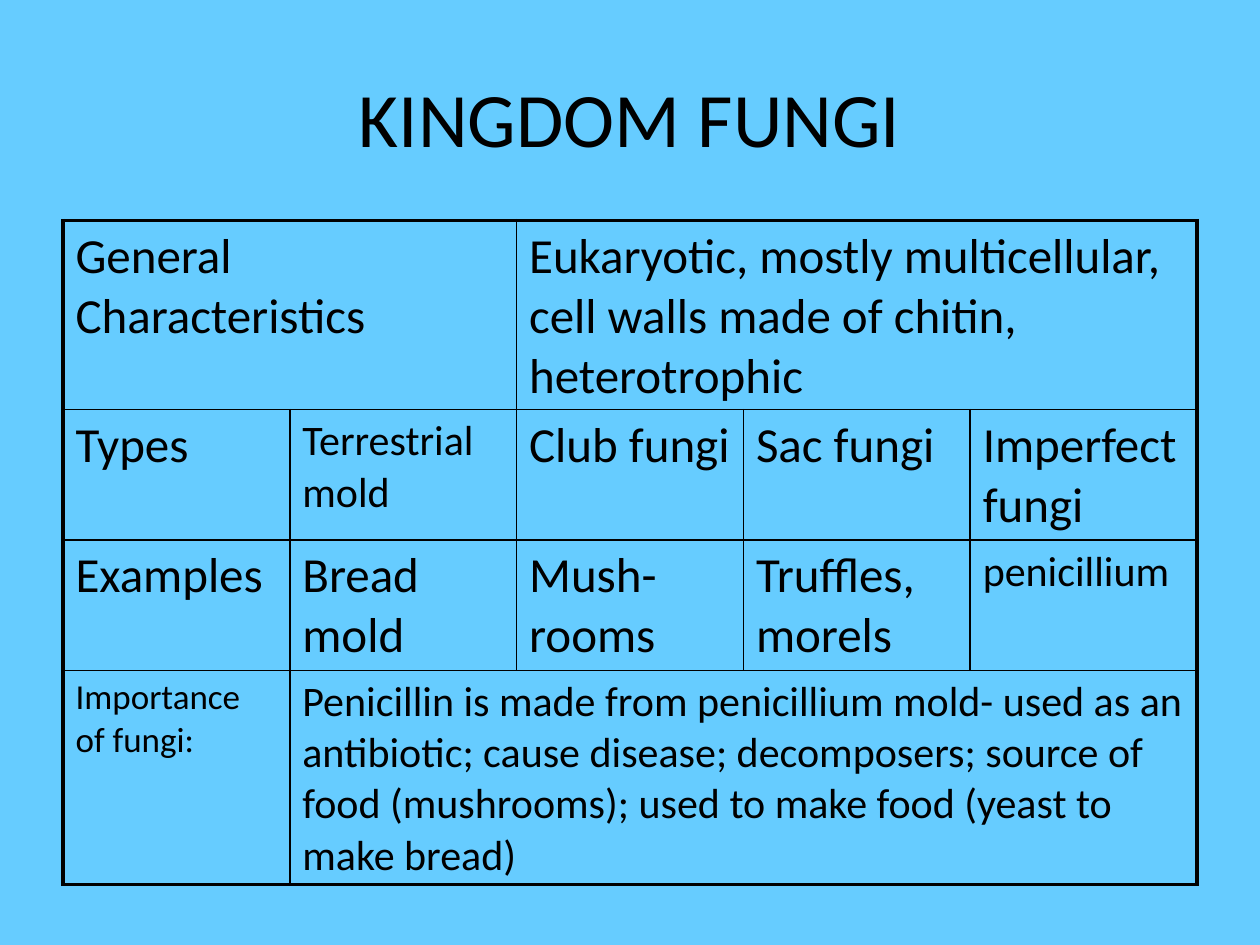
import pptx
import pptx.util
import pptx.dml.color
import pptx.enum.text
import pptx.oxml
import pptx.oxml.ns
from pptx.util import Inches


def color(value):
    return pptx.dml.color.RGBColor.from_string(value)


def write(frame, text, size):
    frame.word_wrap = True
    paragraph = frame.paragraphs[0]
    run = paragraph.add_run()
    run.text = text
    font_format = {"name": "Calibri", "size": pptx.util.Pt(size), "bold": False}
    for name, value in font_format.items():
        setattr(run.font, name, value)
    run.font.color.rgb = color(BLACK)
    return paragraph


BLACK = "000000"
NAMESPACE = pptx.oxml.ns.nsdecls("a")
ROWS = [
    [
        ("General Characteristics", 28, 2),
        ("Eukaryotic, mostly multicellular, cell walls made of chitin, heterotrophic", 28, 3),
    ],
    [
        ("Types", 28, 1),
        ("Terrestrial mold", 24, 1),
        ("Club fungi", 28, 1),
        ("Sac fungi", 28, 1),
        ("Imperfect fungi", 28, 1),
    ],
    [
        ("Examples", 28, 1),
        ("Bread mold", 28, 1),
        ("Mush-rooms", 28, 1),
        ("Truffles, morels", 28, 1),
        ("penicillium", 24, 1),
    ],
    [
        ("Importance of fungi:", 20, 1),
        (
            "Penicillin is made from penicillium mold- used as an antibiotic; cause disease; "
            "decomposers; source of food (mushrooms); used to make food (yeast to make bread)",
            24,
            4,
        ),
    ],
]
ROW_HEIGHTS = [1.5, 1.03, 1.03, 1.7]
COLUMN_COUNT = 5

presentation = pptx.Presentation()
presentation.slide_width = Inches(10)
presentation.slide_height = Inches(7.5)
slide = presentation.slides.add_slide(presentation.slide_layouts[6])
slide.background.fill.solid()
slide.background.fill.fore_color.rgb = color("66CCFF")

title = slide.shapes.add_textbox(Inches(0.5), Inches(0.3), Inches(9), Inches(1.25))
title.text_frame.vertical_anchor = pptx.enum.text.MSO_ANCHOR.MIDDLE
title_paragraph = write(title.text_frame, "KINGDOM FUNGI", 44)
title_paragraph.alignment = pptx.enum.text.PP_ALIGN.CENTER

table = slide.shapes.add_table(
    len(ROWS), COLUMN_COUNT, Inches(0.5), Inches(1.75), Inches(9), Inches(sum(ROW_HEIGHTS))
).table
table_format = {"first_row": False, "horz_banding": False}
for name, value in table_format.items():
    setattr(table, name, value)
for column in table.columns:
    column.width = Inches(9 / COLUMN_COUNT)
for row, height in zip(table.rows, ROW_HEIGHTS):
    row.height = Inches(height)

for row_index, entries in enumerate(ROWS):
    column_index = 0
    for text, size, span in entries:
        end = column_index + span
        cell = table.cell(row_index, column_index)
        if span > 1:
            cell.merge(table.cell(row_index, end - 1))
        paragraph = write(cell.text_frame, text, size)
        paragraph._p.get_or_add_pPr().append(
            pptx.oxml.parse_xml(f'<a:spcBef {NAMESPACE}><a:spcPct val="20000"/></a:spcBef>')
        )
        outer_edges = {
            "lnL": column_index == 0,
            "lnR": end == COLUMN_COUNT,
            "lnT": row_index == 0,
            "lnB": row_index == len(ROWS) - 1,
        }
        for covered_index in range(column_index, end):
            covered = table.cell(row_index, covered_index)
            properties = covered._tc.get_or_add_tcPr()
            for edge, is_outer in outer_edges.items():
                width = pptx.util.Pt(2.25 if is_outer else 1)
                properties.append(
                    pptx.oxml.parse_xml(
                        f'<a:{edge} {NAMESPACE} w="{int(width)}"><a:solidFill>'
                        f'<a:srgbClr val="{BLACK}"/></a:solidFill></a:{edge}>'
                    )
                )
            covered.fill.background()
        column_index = end

presentation.save("out.pptx")
